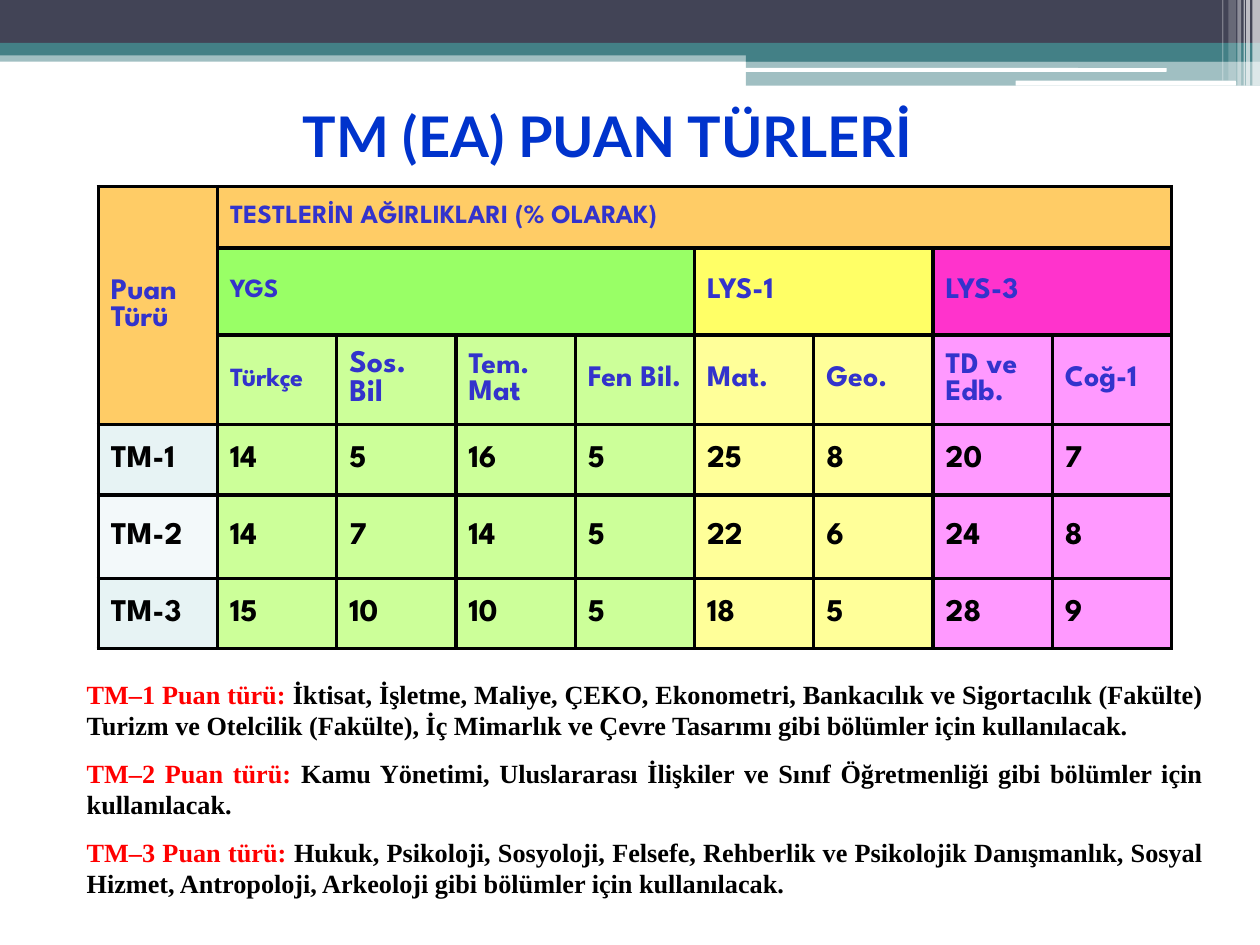
from lxml import etree
from pptx import Presentation
from pptx import util as u
from pptx.dml import color
from pptx.enum import shapes, text
from pptx.oxml import ns

BLACK, BLUE, RED = "000000", "3333CC", "FF0000"
TEAL, NAVY, WHITE = "438086", "424456", "FFFFFF"
ORANGE, LIGHT_GREEN, LIGHT_YELLOW, LIGHT_PINK = "FFCC66", "CCFF99", "FFFF99", "FF99FF"


def rgb(value):
    return color.RGBColor.from_string(value)


class SlideBuilder:
    def __init__(self, slide):
        self.slide = slide
        self.heading = {"name": "Lato", "size": u.Pt(32), "bold": True}
        self.table_font = {"name": "League Spartan", "bold": True}
        self.body = {"name": "Times New Roman", "size": u.Pt(15), "bold": True}

    def run(self, paragraph, content, hex_color, style):
        run = paragraph.add_run()
        run.text = content
        for name, value in style.items():
            setattr(run.font, name, value)
        run.font.color.rgb = rgb(hex_color)

    def bar(self, box, fill, opacity=100, kind=shapes.MSO_SHAPE.RECTANGLE):
        shape = self.slide.shapes.add_shape(kind, *map(u.Inches, box))
        shape.shadow.inherit = False
        shape.line.fill.background()
        shape.fill.solid()
        shape.fill.fore_color.rgb = rgb(fill)
        if opacity < 100:
            node = shape._element.spPr.find(".//" + ns.qn("a:srgbClr"))
            etree.SubElement(node, ns.qn("a:alpha"), val=str(opacity * 1000))

    def text_box(self, box, paragraphs, style, **layout):
        shape = self.slide.shapes.add_textbox(*map(u.Inches, box))
        frame = shape.text_frame
        frame.word_wrap = True
        frame.vertical_anchor = layout["anchor"]
        for index, runs in enumerate(paragraphs):
            paragraph = frame.add_paragraph() if index else frame.paragraphs[0]
            paragraph.alignment = layout["alignment"]
            paragraph.space_before = u.Pt(layout["gap"] if index else 0)
            for content, hex_color in runs:
                self.run(paragraph, content, hex_color, style)

    def table(self, box, heights, columns):
        frame = self.slide.shapes.add_table(len(heights), columns, *map(u.Inches, box))
        table = frame.table
        for row, height in zip(table.rows, heights):
            row.height = u.Inches(height)
        for row in table.rows:
            for cell in row.cells:
                self.borders(cell)
        return table

    def borders(self, cell):
        properties = cell._tc.get_or_add_tcPr()
        for side in ("a:lnL", "a:lnR", "a:lnT", "a:lnB"):
            line = etree.SubElement(properties, ns.qn(side), w=str(u.Pt(2.25)))
            fill = etree.SubElement(line, ns.qn("a:solidFill"))
            etree.SubElement(fill, ns.qn("a:srgbClr"), val=BLACK)

    def cell(self, table, place, content, fill, size, hex_color=BLUE, span=(1, 1)):
        row, column = place
        cell = table.cell(row, column)
        if span != (1, 1):
            cell.merge(table.cell(row + span[0] - 1, column + span[1] - 1))
        cell.fill.solid()
        cell.fill.fore_color.rgb = rgb(fill)
        cell.vertical_anchor = text.MSO_ANCHOR.MIDDLE
        style = {**self.table_font, "size": u.Pt(size)}
        for index, line in enumerate(content.split("\n")):
            frame = cell.text_frame
            paragraph = frame.add_paragraph() if index else frame.paragraphs[0]
            self.run(paragraph, line, hex_color, style)


def main():
    presentation = Presentation()
    presentation.slide_width = u.Inches(10)
    presentation.slide_height = u.Inches(7.5)
    builder = SlideBuilder(presentation.slides.add_slide(presentation.slide_layouts[6]))

    builder.bar((0, 0.4, 10, 0.09), TEAL, 50)
    builder.bar((0, 0, 10, 0.34), NAVY)
    builder.bar((0, 0.34, 10, 0.1), TEAL)
    builder.bar((5.92, 0.39, 4.08, 0.1), TEAL)
    builder.bar((5.92, 0.48, 4.08, 0.2), TEAL, 50)
    for box in ((5.91, 0.54, 3.35, 0.03), (8.06, 0.64, 1.75, 0.04)):
        builder.bar(box, WHITE, kind=shapes.MSO_SHAPE.ROUNDED_RECTANGLE)
    stripes = [
        (9.94, 0.06, 0.68, 65), (9.89, 0.03, 0.68, 65), (9.87, 0.01, 0.68, 60),
        (9.82, 0.03, 0.68, 40), (9.75, 0.06, 0.64, 20), (9.7, 0.01, 0.64, 30),
    ]
    for left, width, height, opacity in stripes:
        builder.bar((left, 0, width, height), WHITE, opacity)

    builder.text_box(
        (1.5, 0.67, 6.65, 0.8), [[("TM (EA) PUAN TÜRLERİ", "0033CC")]], builder.heading,
        anchor=text.MSO_ANCHOR.MIDDLE, alignment=text.PP_ALIGN.CENTER, gap=0)

    table = builder.table((0.78, 1.48, 8.52, 3.67), [0.49, 0.69, 0.71, 0.56, 0.66, 0.56], 9)
    builder.cell(table, (0, 0), "Puan Türü", ORANGE, 17, span=(3, 1))
    builder.cell(table, (0, 1), "TESTLERİN AĞIRLIKLARI (% OLARAK)", ORANGE, 15, span=(1, 8))
    builder.cell(table, (1, 1), "YGS", "99FF66", 15, span=(1, 4))
    builder.cell(table, (1, 5), "LYS-1", "FFFF66", 17, span=(1, 2))
    builder.cell(table, (1, 7), "LYS-3", "FF33CC", 17, span=(1, 2))

    fills = [LIGHT_GREEN] * 4 + [LIGHT_YELLOW] * 2 + [LIGHT_PINK] * 2
    tests = ["Türkçe", "Sos.\nBil", "Tem.\nMat", "Fen Bil.", "Mat.", "Geo.", "TD ve Edb.", "Coğ-1"]
    sizes = [15, 18] + [17] * 6
    for column, (test, fill, size) in enumerate(zip(tests, fills, sizes), 1):
        builder.cell(table, (2, column), test, fill, size)

    scores = [
        ("TM-1", "E7F3F4", [14, 5, 16, 5, 25, 8, 20, 7]),
        ("TM-2", "F3F9FA", [14, 7, 14, 5, 22, 6, 24, 8]),
        ("TM-3", "E7F3F4", [15, 10, 10, 5, 18, 5, 28, 9]),
    ]
    for row, (label, label_fill, weights) in enumerate(scores, 3):
        values = zip([label] + weights, [label_fill] + fills)
        for column, (value, fill) in enumerate(values):
            builder.cell(table, (row, column), str(value), fill, 18, BLACK)

    notes = [
        "İktisat, İşletme, Maliye, ÇEKO, Ekonometri, Bankacılık ve Sigortacılık (Fakülte) "
        "Turizm ve Otelcilik (Fakülte), İç Mimarlık ve Çevre Tasarımı gibi bölümler için kullanılacak.",
        "Kamu Yönetimi, Uluslararası İlişkiler ve Sınıf Öğretmenliği gibi bölümler için kullanılacak.",
        "Hukuk, Psikoloji, Sosyoloji, Felsefe, Rehberlik ve Psikolojik Danışmanlık, Sosyal Hizmet, "
        "Antropoloji, Arkeoloji gibi bölümler için kullanılacak.",
    ]
    paragraphs = [
        [(f"TM–{number} Puan türü: ", RED), (note, BLACK)] for number, note in enumerate(notes, 1)
    ]
    builder.text_box(
        (0.59, 5.33, 9.06, 1.89), paragraphs, builder.body,
        anchor=text.MSO_ANCHOR.TOP, alignment=text.PP_ALIGN.JUSTIFY, gap=9.2)

    presentation.save("out.pptx")


if __name__ == "__main__":
    main()
